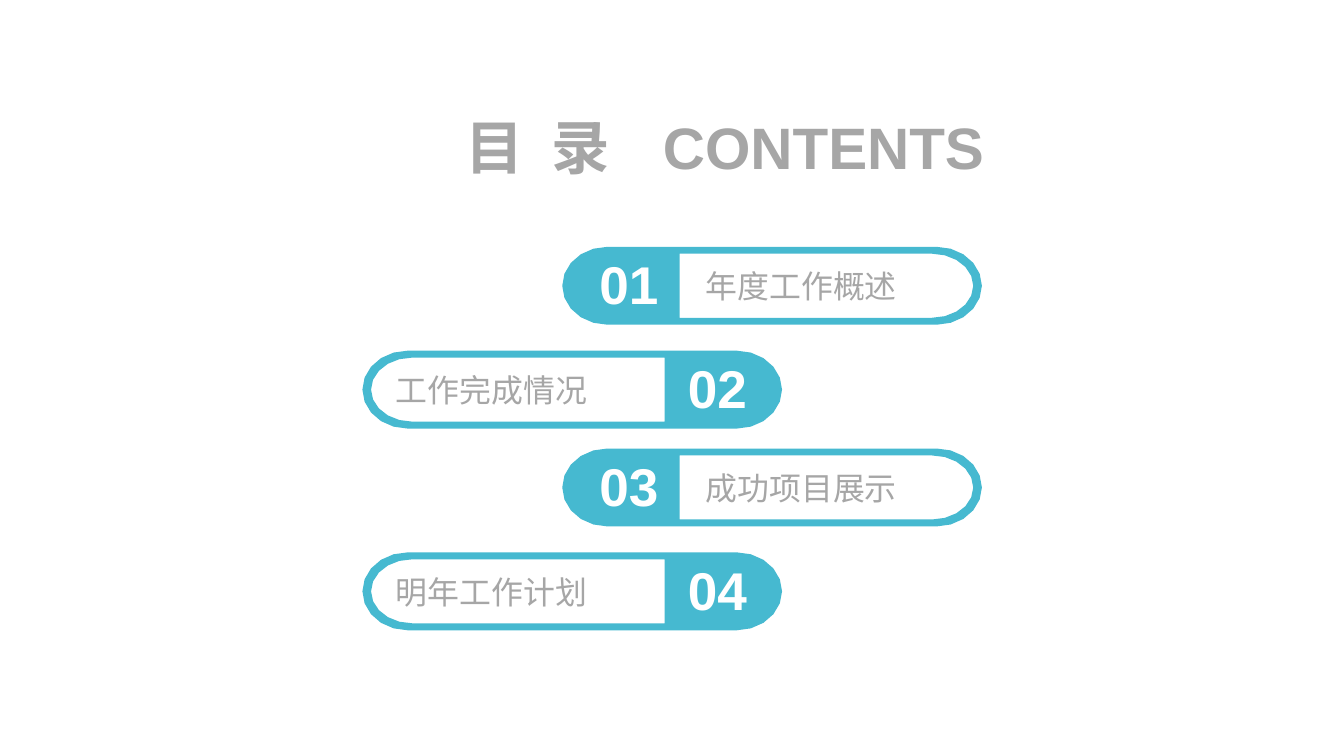
import math

import pptx
import pptx.dml.color
import pptx.enum.text
import pptx.util

Cm = pptx.util.Cm
Pt = pptx.util.Pt
ANCHOR = pptx.enum.text.MSO_ANCHOR
ALIGN = pptx.enum.text.PP_ALIGN

TEAL = pptx.dml.color.RGBColor(0x46, 0xB9, 0xD0)
GRAY = pptx.dml.color.RGBColor(0xA6, 0xA6, 0xA6)
WHITE = pptx.dml.color.RGBColor(0xFF, 0xFF, 0xFF)

FONT = "Arial"
TOPICS = ["年度工作概述", "工作完成情况", "成功项目展示", "明年工作计划"]
PILL_WIDTH, PILL_HEIGHT = 11.15, 2.07
WINDOW_LEFT, WINDOW_RIGHT = 3.12, 10.92
WINDOW_HEIGHT = 1.7
OUTER_RADIUS, INNER_RADIUS = 1.2, 1.09
RIGHT_LEFT, LEFT_LEFT = 14.94, 9.63
FIRST_TOP, PAIR_PITCH, PARTNER_OFFSET = 6.56, 5.36, 2.76
ARC_STEPS = 10


def add_span(para, text, size, color, bold=False):
    span = para.add_run()
    span.text = text
    span.font.name = FONT
    span.font.size = Pt(size)
    span.font.bold = bold
    span.font.color.rgb = color
    return span


def set_frame(frame, anchor, inset=0):
    frame.word_wrap = True
    frame.vertical_anchor = anchor
    frame.margin_left = Cm(inset)
    frame.margin_top = frame.margin_right = frame.margin_bottom = 0


def add_label(page, left, top, width, height, anchor=ANCHOR.TOP):
    box = page.shapes.add_textbox(Cm(left), Cm(top), Cm(width), Cm(height))
    set_frame(box.text_frame, anchor)
    box.text_frame.auto_size = pptx.enum.text.MSO_AUTO_SIZE.SHAPE_TO_FIT_TEXT
    para = box.text_frame.paragraphs[0]
    para.alignment = ALIGN.CENTER
    return para


def round_end(center, radius, height, start):
    angles = [start + math.pi * step / ARC_STEPS for step in range(ARC_STEPS + 1)]
    return [
        (center + radius * math.cos(angle), PILL_HEIGHT / 2 + height / 2 * math.sin(angle))
        for angle in angles
    ]


def pill_contours():
    outline = round_end(PILL_WIDTH - OUTER_RADIUS, OUTER_RADIUS, PILL_HEIGHT, -math.pi / 2)
    outline += round_end(OUTER_RADIUS, OUTER_RADIUS, PILL_HEIGHT, math.pi / 2)
    window = round_end(WINDOW_RIGHT - INNER_RADIUS, INNER_RADIUS, WINDOW_HEIGHT, -math.pi / 2)
    window += [(WINDOW_LEFT, window[-1][1]), (WINDOW_LEFT, window[0][1])]
    return outline, window


def add_pill(page, left, top, topic, inset, mirrored):
    def place(point):
        across = PILL_WIDTH - point[0] if mirrored else point[0]
        return Cm(left + across), Cm(top + point[1])

    outline, window = [[place(point) for point in contour] for contour in pill_contours()]
    builder = page.shapes.build_freeform(*outline[0])
    builder.add_line_segments(outline[1:], close=True)
    builder.move_to(*window[0])
    builder.add_line_segments(window[1:], close=True)
    pill = builder.convert_to_shape()
    pill.shadow.inherit = False
    pill.fill.solid()
    pill.fill.fore_color.rgb = TEAL
    pill.line.fill.background()
    set_frame(pill.text_frame, ANCHOR.MIDDLE, inset)
    para = pill.text_frame.paragraphs[0]
    para.alignment = ALIGN.LEFT
    add_span(para, topic, 24, GRAY)


def add_entry(page, index, topic):
    pair, mirrored = divmod(index, 2)
    left = LEFT_LEFT if mirrored else RIGHT_LEFT
    top = FIRST_TOP + pair * PAIR_PITCH + mirrored * PARTNER_OFFSET
    add_pill(page, left, top, topic, 0.89 if mirrored else 3.81, mirrored)
    number_left = left + (8.25 if mirrored else 0.59)
    para = add_label(page, number_left, top + 0.13, 2.36, 1.7)
    add_span(para, f"{index + 1:02d}", 40, WHITE, bold=True)


def add_heading(page):
    para = add_label(page, 11.95, 2.95, 4.67, 1.88, ANCHOR.MIDDLE)
    title = add_span(para, "目 录", 44, GRAY, bold=True)
    title.font._element.set("spc", "550")
    para = add_label(page, 17.48, 2.95, 8.81, 1.88)
    add_span(para, "CONTENTS", 44, GRAY, bold=True)


def main():
    deck = pptx.Presentation()
    deck.slide_width = Cm(35.71)
    deck.slide_height = Cm(20.09)
    page = deck.slides.add_slide(deck.slide_layouts[6])
    for index, topic in enumerate(TOPICS):
        add_entry(page, index, topic)
    add_heading(page)
    deck.save("out.pptx")


if __name__ == "__main__":
    main()
